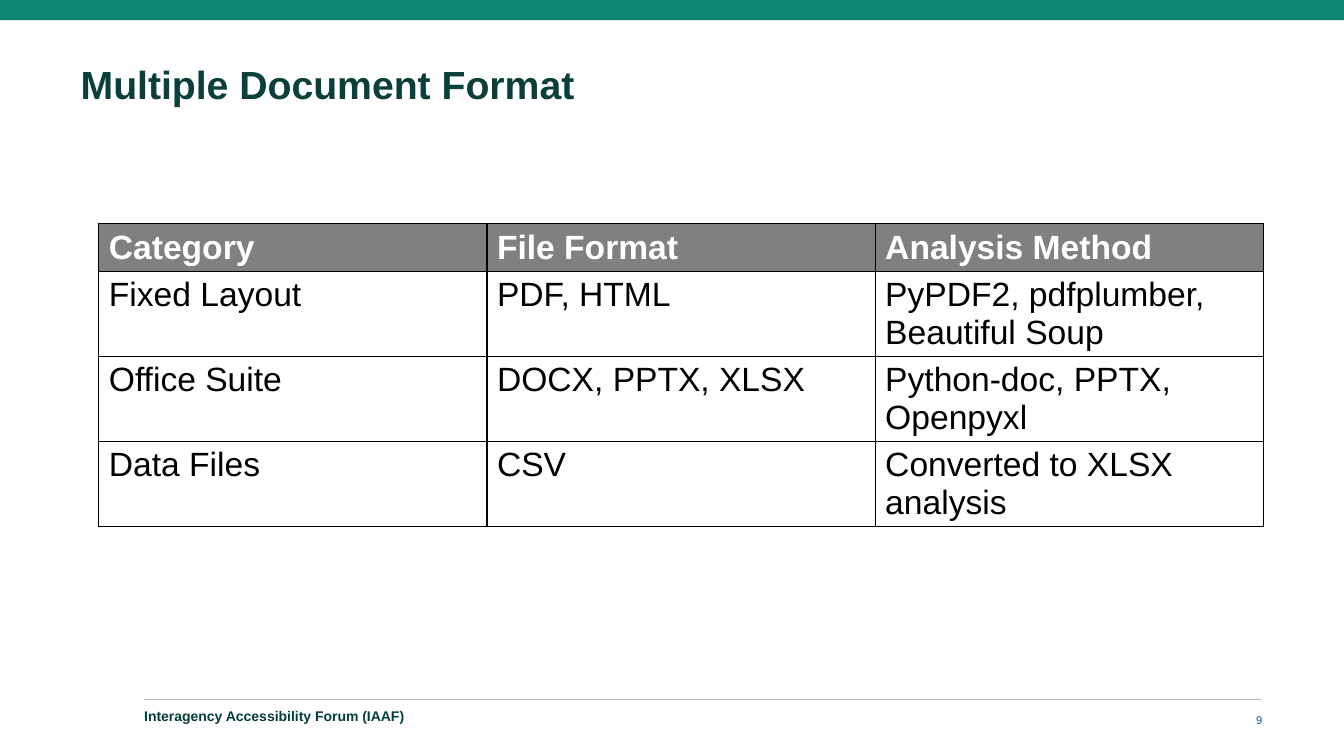
from lxml.etree import SubElement
from pptx import Presentation
from pptx.dml.color import RGBColor
from pptx.enum.shapes import MSO_CONNECTOR, MSO_SHAPE
from pptx.enum.text import MSO_ANCHOR, PP_ALIGN
from pptx.oxml.ns import qn
from pptx.util import Inches, Pt


def color(hex_code):
    return RGBColor.from_string(hex_code)


class SlideBuilder:
    FONT = "Arial"

    def __init__(self, slide):
        self.slide = slide

    def style(self, paragraph, size, hex_code, bold=False):
        font = paragraph.font
        font.name, font.size, font.bold = self.FONT, Pt(size), bold
        font.color.rgb = color(hex_code)

    def place(self, shape, left, top, width, height):
        shape.left, shape.top = Inches(left), Inches(top)
        shape.width, shape.height = Inches(width), Inches(height)

    def set_text(self, frame, text, size, hex_code, bold=False, anchor=MSO_ANCHOR.MIDDLE,
                 align=PP_ALIGN.LEFT, spacing=1.0, top_inset=0):
        frame.word_wrap = True
        frame.vertical_anchor = anchor
        frame.margin_left = frame.margin_right = frame.margin_bottom = 0
        frame.margin_top = Inches(top_inset)
        paragraph = frame.paragraphs[0]
        paragraph.text = text
        paragraph.alignment = align
        paragraph.line_spacing = spacing
        self.style(paragraph, size, hex_code, bold)

    def title(self, text, box, **look):
        heading = self.slide.shapes.title
        self.place(heading, *box)
        self.set_text(heading.text_frame, text, anchor=MSO_ANCHOR.TOP, **look)

    def label(self, text, box, **look):
        caption = self.slide.shapes.add_textbox(*map(Inches, box))
        self.set_text(caption.text_frame, text, **look)

    def band(self, box, hex_code):
        band = self.slide.shapes.add_shape(MSO_SHAPE.RECTANGLE, *map(Inches, box))
        band.shadow.inherit = False
        band.fill.solid()
        band.fill.fore_color.rgb = color(hex_code)
        band.line.fill.background()

    def rule(self, left, right, y, hex_code, weight):
        rule = self.slide.shapes.add_connector(
            MSO_CONNECTOR.STRAIGHT, *map(Inches, (left, y, right, y)))
        rule.line.color.rgb = color(hex_code)
        rule.line.width = Pt(weight)
        SubElement(rule._element.spPr, qn("a:effectLst"))

    def border(self, cell, hex_code, weight):
        properties = cell._tc.get_or_add_tcPr()
        for side in ("lnL", "lnR", "lnT", "lnB"):
            edge = SubElement(properties, qn(f"a:{side}"), w=str(Pt(weight)))
            fill = SubElement(edge, qn("a:solidFill"))
            SubElement(fill, qn("a:srgbClr"), val=hex_code)

    def table(self, rows, left, top, column_width, row_height, size):
        columns = len(rows[0])
        grid = self.slide.shapes.add_table(
            len(rows), columns, Inches(left), Inches(top),
            Inches(column_width * columns), Inches(row_height * len(rows))).table
        for r, row in enumerate(rows):
            header = r == 0
            for c, text in enumerate(row):
                cell = grid.cell(r, c)
                self.border(cell, "000000", 1)
                cell.fill.solid()
                cell.fill.fore_color.rgb = color("808080" if header else "FFFFFF")
                cell.text = text
                self.style(cell.text_frame.paragraphs[0], size,
                           "FFFFFF" if header else "000000", header)


FORMATS = [
    ("Category", "File Format", "Analysis Method"),
    ("Fixed Layout", "PDF, HTML", "PyPDF2, pdfplumber, Beautiful Soup"),
    ("Office Suite", "DOCX, PPTX, XLSX", "Python-doc, PPTX, Openpyxl"),
    ("Data Files", "CSV", "Converted to XLSX analysis"),
]


def main():
    deck = Presentation()
    deck.slide_width, deck.slide_height = Inches(13.33), Inches(7.5)
    builder = SlideBuilder(deck.slides.add_slide(deck.slide_layouts[5]))

    # Header band and title
    builder.band((0, 0, 13.33, 0.2), "0E8775")
    builder.title("Multiple Document Format", (0.8, 0.6, 11.73, 0.47),
                  size=28, hex_code="0B3F3A", bold=True, spacing=0.9, top_inset=0.05)

    # Table of formats
    builder.table(FORMATS, left=0.98, top=2.22, column_width=3.85, row_height=0.41, size=24)

    # Footer
    builder.rule(1.43, 12.51, 6.94, "B2B2B2", 0.75)
    builder.label("Interagency Accessibility Forum (IAAF)", (1.43, 7.04, 7.01, 0.19),
                  size=10, hex_code="033F3A", bold=True, spacing=0.5)
    builder.label("9", (11.94, 7.04, 0.58, 0.2),
                  size=8, hex_code="006197", align=PP_ALIGN.RIGHT)

    deck.save("out.pptx")


if __name__ == "__main__":
    main()
